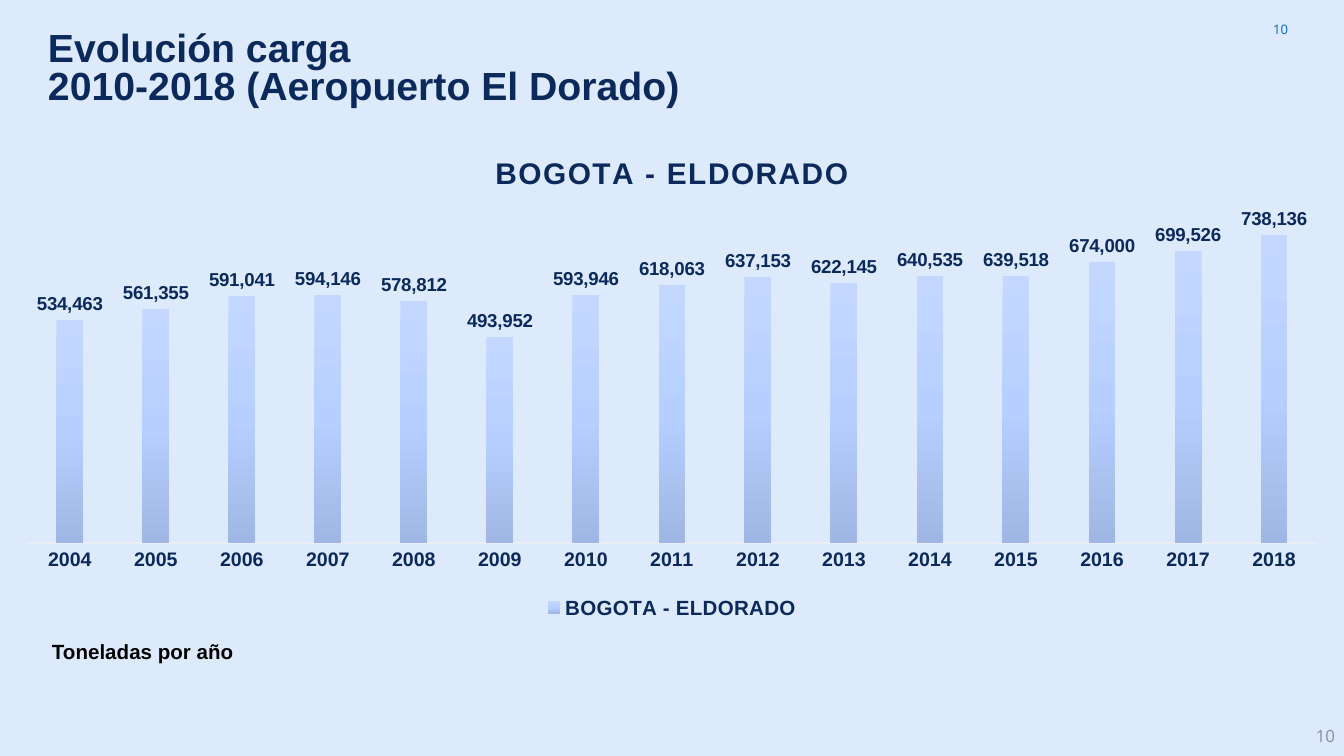
"""Build a slide with a column chart of yearly air cargo at El Dorado airport."""
from dataclasses import dataclass

from lxml import etree
from pptx import Presentation
from pptx.chart.data import CategoryChartData
from pptx.dml.color import RGBColor
from pptx.enum.chart import XL_CHART_TYPE, XL_LABEL_POSITION, XL_LEGEND_POSITION, XL_TICK_MARK
from pptx.enum.text import MSO_ANCHOR, PP_ALIGN
from pptx.oxml import parse_xml
from pptx.oxml.ns import nsdecls, qn
from pptx.util import Pt

COLUMNS = XL_CHART_TYPE.COLUMN_CLUSTERED
OUTSIDE = XL_LABEL_POSITION.OUTSIDE_END
BOTTOM = XL_LEGEND_POSITION.BOTTOM
NO_TICK = XL_TICK_MARK.NONE
MIDDLE, TOP = MSO_ANCHOR.MIDDLE, MSO_ANCHOR.TOP
LEFT, RIGHT = PP_ALIGN.LEFT, PP_ALIGN.RIGHT

TITLE = ["Evolución carga", "2010-2018 (Aeropuerto El Dorado)"]
UNIT = "Toneladas por año"
NUMBER = "10"
SERIES = "BOGOTA - ELDORADO"
FIRST_YEAR = 2004
TONNES = [534463, 561355, 591041, 594146, 578812, 493952, 593946, 618063,
          637153, 622145, 640535, 639518, 674000, 699526, 738136]

EMU_PER_PX = 914400 / 134.4
PAGE_SIZE = (1344, 756)
TITLE_AREA = (39, 27, 775, 87)
CHART_AREA = (0, 132, 1344, 493)
UNIT_AREA = (39, 632, 438, 39)
TOP_NUMBER_AREA = (1220, 0, 81, 58)
LOW_NUMBER_AREA = (1117, 715, 227, 41)


@dataclass(frozen=True)
class Theme:
    face: str = "Arial"
    number_face: str = "Open Sans"
    background: str = "DCEAFB"
    navy: str = "0B295B"
    black: str = "000000"
    blue: str = "0066CD"
    gray: str = "888E9D"
    rule: str = "F2F2F2"
    chart_text: str = "073763"
    bar_stops: tuple = ((0, "C4D8FF"), (50, "B7CFFF"), (100, "A0B7E5"))
    title: float = 21
    chart_title: float = 16
    note: float = 11
    axis: float = 10.5
    label: float = 10
    low_number: float = 9
    top_number: float = 7


THEME = Theme()


def px(length):
    return round(length * EMU_PER_PX)


def set_font(font, size, color, bold=True, face=THEME.face):
    font.name, font.size, font.bold = face, Pt(size), bold
    font.color.rgb = RGBColor.from_string(color)


def write(box, area, lines, size, color, bold=True, face=THEME.face,
          align=LEFT, anchor=MIDDLE, insets=(9, 5), spacing=None):
    box.left, box.top, box.width, box.height = map(px, area)
    frame = box.text_frame
    frame.word_wrap, frame.vertical_anchor = True, anchor
    frame.margin_left = frame.margin_right = px(insets[0])
    frame.margin_top = frame.margin_bottom = px(insets[1])
    frame.text = "\n".join(lines)
    for paragraph in frame.paragraphs:
        paragraph.alignment, paragraph.line_spacing = align, spacing
        set_font(paragraph.font, size, color, bold, face)


def set_rule(line, width):
    line.width = Pt(width)
    line.color.rgb = RGBColor.from_string(THEME.rule)


def set_opacity(chart, path, percent):
    for color in chart.element.xpath(path + "/c:spPr//a:srgbClr"):
        etree.SubElement(color, qn("a:alpha")).set("val", str(percent * 1000))


def fill_bars(series):
    stops = "".join(f'<a:gs pos="{position * 1000}"><a:srgbClr val="{color}"/></a:gs>'
                    for position, color in THEME.bar_stops)
    series.format.fill.background()
    blank = series.format.fill._xPr.find(qn("a:noFill"))
    blank.getparent().replace(blank, parse_xml(
        f'<a:gradFill {nsdecls("a")} rotWithShape="1"><a:gsLst>{stops}</a:gsLst>'
        '<a:lin ang="5400000" scaled="0"/></a:gradFill>'))


def add_cargo_chart(page):
    data = CategoryChartData(number_format="#,##0")
    data.categories = [str(FIRST_YEAR + index) for index in range(len(TONNES))]
    data.add_series(SERIES, TONNES)
    chart = page.shapes.add_chart(COLUMNS, *map(px, CHART_AREA), data).chart
    set_font(chart.font, THEME.label, THEME.chart_text, False)

    chart.has_title = True
    chart.chart_title.include_in_layout = False
    chart.chart_title.text_frame.text = SERIES
    heading = chart.chart_title.text_frame.paragraphs[0]
    set_font(heading.font, THEME.chart_title, THEME.navy)
    heading.runs[0].font._element.set("spc", "100")

    chart.has_legend = True
    chart.legend.position, chart.legend.include_in_layout = BOTTOM, False
    set_font(chart.legend.font, THEME.note, THEME.navy)

    years, tonnes = chart.category_axis, chart.value_axis
    years.major_tick_mark = years.minor_tick_mark = NO_TICK
    set_font(years.tick_labels.font, THEME.axis, THEME.navy)
    set_rule(years.format.line, 1)
    set_opacity(chart, ".//c:catAx", 54)
    tonnes.visible = False
    tonnes.minimum_scale, tonnes.maximum_scale = 0, 800000
    tonnes.tick_labels.number_format = "#,##0"
    set_rule(tonnes.major_gridlines.format.line, 0.75)
    set_opacity(chart, ".//c:majorGridlines", 10)

    plot = chart.plots[0]
    plot.gap_width, plot.vary_by_categories = 219, False
    fill_bars(plot.series[0])
    labels = plot.series[0].data_labels
    labels.show_value, labels.position = True, OUTSIDE
    labels.number_format, labels.number_format_is_linked = "#,##0", False
    set_font(labels.font, THEME.label, THEME.navy)


def main():
    deck = Presentation()
    deck.slide_width, deck.slide_height = map(px, PAGE_SIZE)
    page = deck.slides.add_slide(deck.slide_layouts[5])
    page.background.fill.solid()
    page.background.fill.fore_color.rgb = RGBColor.from_string(THEME.background)

    def new_box():
        return page.shapes.add_textbox(0, 0, 0, 0)

    write(page.shapes.title, TITLE_AREA, TITLE, THEME.title, THEME.navy, spacing=0.8)
    write(new_box(), TOP_NUMBER_AREA, [NUMBER], THEME.top_number, THEME.blue, False,
          THEME.number_face, RIGHT, insets=(13, 13))
    write(new_box(), UNIT_AREA, [UNIT], THEME.note, THEME.black, anchor=TOP, insets=(13, 7))
    write(new_box(), LOW_NUMBER_AREA, [NUMBER], THEME.low_number, THEME.gray, False,
          THEME.number_face, RIGHT)
    add_cargo_chart(page)
    deck.save("out.pptx")


if __name__ == "__main__":
    main()
